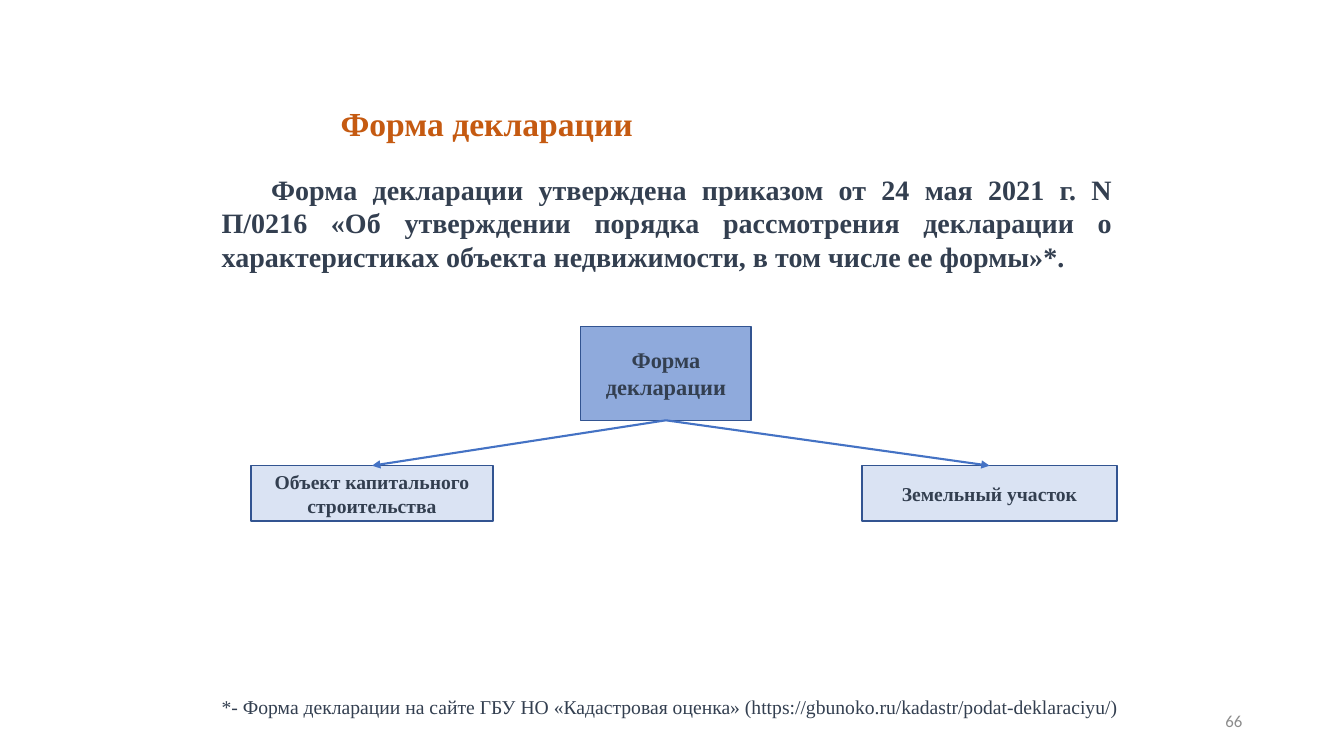
from lxml.etree import SubElement
from pptx import Presentation
from pptx.dml.color import RGBColor
from pptx.enum.shapes import MSO_CONNECTOR as Connector, MSO_SHAPE as Shape
from pptx.enum.text import MSO_ANCHOR as Anchor, PP_ALIGN as Align
from pptx.oxml.ns import qn
from pptx.util import Inches, Pt

COLORS = {
    "text": "333F50", "title": "C55A11", "number": "8C8C8C", "root": "8FAADC",
    "branch": "DAE3F3", "border": "325491", "arrow": "4472C4",
}
SERIF = "Times New Roman"

TEXTS = [
    dict(box=(3.28, 0.97, 3.13, 0.5), lines=["Форма декларации"], size=24,
         color="title", bold=True, wrap=False),
    dict(box=(2.1, 1.66, 9.03, 1.11), size=20, bold=True, align=Align.JUSTIFY, indent=0.49,
         lines=["Форма декларации утверждена приказом от 24 мая 2021 г. N П/0216 "
                "«Об утверждении порядка рассмотрения декларации о характеристиках "
                "объекта недвижимости, в том числе ее формы»*."]),
    dict(box=(2.1, 6.84, 9.13, 0.35), size=14, align=Align.JUSTIFY,
         lines=["*- Форма декларации на сайте ГБУ НО «Кадастровая оценка» "
                "(https://gbunoko.ru/kadastr/podat-deklaraciyu/)"]),
    dict(box=(9.42, 6.95, 3, 0.4), lines=["66"], size=12, color="number",
         font="Calibri", align=Align.RIGHT, anchor=Anchor.MIDDLE),
]
ROOT = ((5.76, 3.24, 1.69, 0.93), ["Форма", "декларации"], 16)
BRANCHES = [
    ((2.49, 4.62, 2.4, 0.55), ["Объект капитального строительства"], 14),
    ((8.55, 4.62, 2.53, 0.55), ["Земельный участок"], 14),
]


def rgb(name):
    """Return a palette colour."""
    return RGBColor.from_string(COLORS[name])


def write(shape, lines, size, color="text", font=SERIF, bold=False,
          align=Align.LEFT, anchor=Anchor.TOP, wrap=True, indent=0):
    """Fill a shape with formatted paragraphs."""
    frame = shape.text_frame
    frame.word_wrap = wrap
    frame.vertical_anchor = anchor
    for index, line in enumerate(lines):
        paragraph = frame.add_paragraph() if index else frame.paragraphs[0]
        paragraph.alignment = align
        if indent:
            paragraph._p.get_or_add_pPr().set("indent", str(Inches(indent)))
        run = paragraph.add_run()
        run.text = line
        run.font.name = font
        run.font.size = Pt(size)
        run.font.bold = bold
        run.font.color.rgb = rgb(color)


def add_box(slide, box, lines, size, fill):
    """Add a bordered rectangle with centred bold text."""
    shape = slide.shapes.add_shape(Shape.RECTANGLE, *map(Inches, box))
    shape.shadow.inherit = False
    shape.fill.solid()
    shape.fill.fore_color.rgb = rgb(fill)
    shape.line.color.rgb = rgb("border")
    shape.line.width = Pt(1)
    write(shape, lines, size, bold=True, align=Align.CENTER, anchor=Anchor.MIDDLE)
    return shape


def add_arrow(slide, start, end):
    """Join the bottom of one box to the top of another."""
    arrow = slide.shapes.add_connector(Connector.STRAIGHT, 0, 0, 0, 0)
    arrow.begin_connect(start, 2)
    arrow.end_connect(end, 0)
    arrow.line.color.rgb = rgb("arrow")
    arrow.line.width = Pt(1.5)
    SubElement(arrow.line._get_or_add_ln(), qn("a:tailEnd"), type="triangle")
    SubElement(arrow._element.spPr, qn("a:effectLst"))


def main():
    """Build the declaration form slide."""
    presentation = Presentation()
    presentation.slide_width, presentation.slide_height = Inches(13.33), Inches(7.5)
    slide = presentation.slides.add_slide(presentation.slide_layouts[6])
    for item in TEXTS:
        style = {key: value for key, value in item.items() if key != "box"}
        write(slide.shapes.add_textbox(*map(Inches, item["box"])), **style)
    root = add_box(slide, *ROOT, "root")
    branches = [add_box(slide, *branch, "branch") for branch in BRANCHES]
    for branch in branches:
        add_arrow(slide, root, branch)
    presentation.save("out.pptx")


if __name__ == "__main__":
    main()
